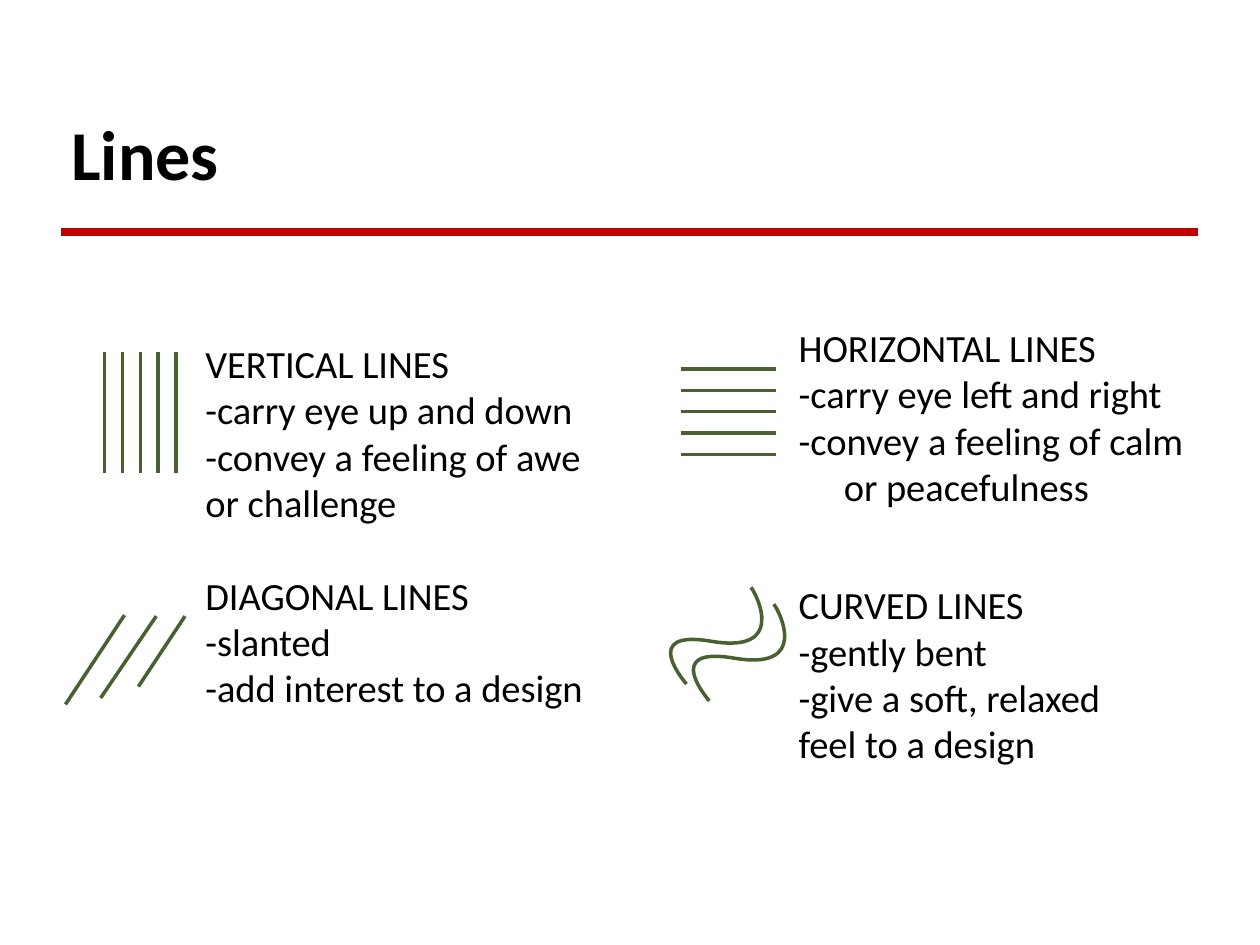
from lxml import etree
from pptx import Presentation
from pptx import util as u
from pptx.dml.color import RGBColor
from pptx.enum import shapes, text
from pptx.oxml.ns import qn

Cm, Pt = u.Cm, u.Pt
BLACK, RED, GREEN = "000000", "C00000", "496132"

TITLE = "Lines"
LEFT = [
    ["VERTICAL LINES", "-carry eye up and down",
     "-convey a feeling of awe", "or challenge"],
    ["DIAGONAL LINES", "-slanted", "-add interest to a design"],
]
RIGHT = [
    ["HORIZONTAL LINES", "-carry eye left and right",
     "-convey a feeling of calm or peacefulness"],
    ["CURVED LINES", "-gently bent", "-give a soft, relaxed",
     "feel to a design"],
]
COLUMNS = [
    dict(groups=LEFT, left=3.86, width=8.84, inset=0.36, gap=26.85, heading=1),
    dict(groups=RIGHT, left=15.82, width=8.61, inset=0.13, gap=44.2, heading=0.9),
]

VERTICALS = [(2.11 + 0.36 * i, 7.09, 2.11 + 0.36 * i, 9.53) for i in range(5)]
HORIZONTALS = [(13.72, 7.44 + 0.43 * i, 15.65, 7.44 + 0.43 * i) for i in range(5)]
DIAGONALS = [(2.51, 12.4, 1.32, 14.2), (3.15, 12.42, 2.03, 14.07),
             (3.73, 12.42, 2.79, 13.84)]
CURVE = [(13.84, 13.79), (13.84, 13.79), (12.85, 12.67), (14.35, 12.93),
         (15.85, 13.18), (15.27, 12.01), (15.14, 11.84)]
CURVE_SHIFTS = [(0, 0), (0.46, 0.34)]


def rgb(value):
    return RGBColor.from_string(value)


def style_line(shape, color, width):
    shape.line.color.rgb = rgb(color)
    shape.line.width = Pt(width)


def add_line(s, ends, color=GREEN, width=2):
    line = s.shapes.add_connector(shapes.MSO_CONNECTOR.STRAIGHT, *map(Cm, ends))
    style_line(line, color, width)
    etree.SubElement(line.element.spPr, qn("a:effectLst"))


def add_curve(s, dx, dy):
    points = [(Cm(x + dx), Cm(y + dy)) for x, y in CURVE]
    builder = s.shapes.build_freeform(*points[0])
    builder.add_line_segments(points[1:], close=False)
    curve = builder.convert_to_shape()
    curve.shadow.inherit = False
    curve.fill.background()
    style_line(curve, GREEN, 2)
    outline = curve.element.find(".//" + qn("a:path"))
    segments = outline.findall(qn("a:lnTo"))
    for i in range(0, len(segments), 3):
        bezier = etree.SubElement(outline, qn("a:cubicBezTo"))
        for segment in segments[i:i + 3]:
            bezier.append(segment[0])
            outline.remove(segment)


def add_text_frame(s, left, top, width, height):
    tf = s.shapes.add_textbox(*map(Cm, (left, top, width, height))).text_frame
    tf.word_wrap = True
    return tf


def style_font(p, size, bold=False):
    for r in p.runs:
        r.font.name = "Calibri"
        r.font.size = Pt(size)
        r.font.bold = bold
        r.font.color.rgb = rgb(BLACK)


def add_title(s):
    tf = add_text_frame(s, 1.19, 2.03, 22.99, 2.29)
    tf.vertical_anchor = text.MSO_ANCHOR.MIDDLE
    tf.text = TITLE
    p = tf.paragraphs[0]
    p.line_spacing = 0.9
    style_font(p, 40, bold=True)


def add_column(s, groups, left, width, inset, gap, heading):
    tf = add_text_frame(s, left, 6.5, width, 12.55)
    tf.margin_top = Cm(inset)
    tf.text = "\n".join(line for group in groups for line in group)
    headings = [group[0] for group in groups]
    for i, p in enumerate(tf.paragraphs):
        pPr = p._p.get_or_add_pPr()
        pPr.set("marL", str(Cm(0.94)))
        pPr.set("indent", str(-Cm(0.91)))
        if p.text in headings:
            p.line_spacing = float(heading)
            if i:
                p.space_before = Pt(gap)
        style_font(p, 22)


def main():
    prs = Presentation()
    prs.slide_width, prs.slide_height = Cm(25.4), Cm(19.05)
    s = prs.slides.add_slide(prs.slide_layouts[6])
    add_line(s, (1.22, 4.67, 24.16, 4.67), RED, 4.5)
    add_title(s)
    for ends in VERTICALS + DIAGONALS + HORIZONTALS:
        add_line(s, ends)
    for shift in CURVE_SHIFTS:
        add_curve(s, *shift)
    for column in COLUMNS:
        add_column(s, **column)
    prs.save("out.pptx")


if __name__ == "__main__":
    main()
